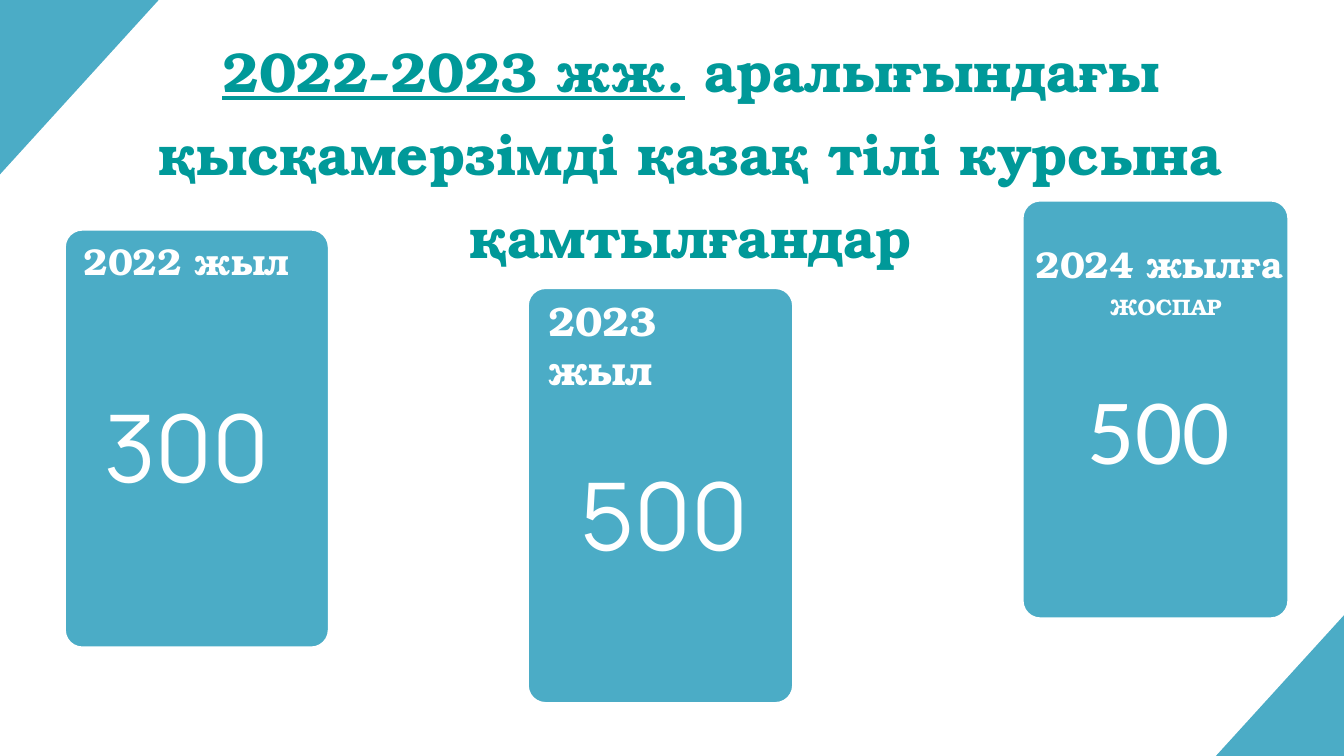
from pptx import Presentation
from pptx.dml.color import RGBColor
from pptx.enum.shapes import MSO_SHAPE as Shape
from pptx.enum.text import MSO_ANCHOR as Anchor, MSO_AUTO_SIZE as AutoSize, PP_ALIGN as Align
from pptx.util import Cm, Pt

BLUE = RGBColor(0x4B, 0xAC, 0xC6)
TEAL = RGBColor(0x00, 0x99, 0x99)
WHITE = RGBColor(0xFF, 0xFF, 0xFF)
SERIF = "TeX Gyre Bonum"
SANS = "Manrope"


def add_band(page, left, top):
    """Add a slanted corner band."""
    band = page.shapes.add_shape(Shape.RECTANGLE, Cm(left), Cm(top), Cm(5.44), Cm(14.61))
    band.rotation = 42.3
    band.shadow.inherit = False
    band.fill.solid()
    band.fill.fore_color.rgb = BLUE
    band.line.fill.background()


def add_card(page, left, top, width, height):
    """Add a rounded card with a white outline."""
    card = page.shapes.add_shape(Shape.ROUNDED_RECTANGLE, Cm(left), Cm(top), Cm(width), Cm(height))
    card.adjustments[0] = 0.07
    card.shadow.inherit = False
    card.fill.solid()
    card.fill.fore_color.rgb = BLUE
    card.line.color.rgb = WHITE
    card.line.width = Pt(4.5)


def set_frame(frame, inset=0, wrap=True):
    """Set the insets, wrapping and growth of a text frame."""
    frame.margin_left = frame.margin_right = Cm(2 * inset)
    frame.margin_top = frame.margin_bottom = Cm(inset)
    frame.word_wrap = wrap
    frame.auto_size = AutoSize.SHAPE_TO_FIT_TEXT
    frame.vertical_anchor = Anchor.TOP


def style_para(para, name, size, color=WHITE, bold=False, align=Align.CENTER, spacing=None):
    """Set the font, alignment and line spacing of a paragraph."""
    para.alignment = align
    if spacing:
        para.line_spacing = Pt(spacing)
    para.font.name = name
    para.font.size = Pt(size)
    para.font.bold = bold
    para.font.color.rgb = color


def add_text(page, left, top, width, height, text, inset=0, wrap=True, **style):
    """Add a one-paragraph text box and return its frame."""
    box = page.shapes.add_textbox(Cm(left), Cm(top), Cm(width), Cm(height))
    frame = box.text_frame
    set_frame(frame, inset, wrap)
    para = frame.paragraphs[0]
    para.text = text
    style_para(para, **style)
    return frame


def add_title(page):
    """Fill the title placeholder, underlining the period."""
    title = page.shapes.title
    title.left, title.top, title.width, title.height = Cm(4.17), Cm(0.79), Cm(43.87), Cm(9.5)
    set_frame(title.text_frame)
    para = title.text_frame.paragraphs[0]
    period = para.add_run()
    period.text = "2022-2023 жж."
    period.font.underline = True
    para.add_run().text = " аралығындағы қысқамерзімді қазақ тілі курсына қамтылғандар"
    style_para(para, SERIF, 60, TEAL, bold=True, spacing=88.8)


def add_labels(page):
    """Add the year headings of the cards."""
    heading = dict(name=SERIF, size=40, bold=True, spacing=36.3)
    add_text(page, 2.24, 9.42, 9.63, 1.27, "2022 жыл", **heading)
    add_text(page, 20.47, 11.05, 8.97, 2.13, "2023 жыл", inset=0.127,
             name=SERIF, size=44, bold=True, align=Align.LEFT)
    frame = add_text(page, 38.61, 9.53, 10.41, 2.57, "2024 жылға", **heading)
    plan = frame.add_paragraph()
    plan.text = "ЖОСПАР"
    plan._p.get_or_add_pPr().set("marL", str(Cm(0.5)))
    style_para(plan, SERIF, 24, bold=True, spacing=36.3)


def add_numbers(page):
    """Add the head counts of the cards."""
    count = dict(name=SANS, size=100, spacing=215.9)
    add_text(page, 3.05, 11.35, 8.03, 7.7, "300", **count)
    add_text(page, 20.45, 13.89, 9.32, 6.76, "500", **count)
    add_text(page, 40.87, 13.89, 5.92, 4.52, "500", inset=0.127, wrap=False,
             name="Calibri", size=100, align=Align.LEFT)


def main():
    """Build and save the deck."""
    deck = Presentation()
    deck.slide_width, deck.slide_height = Cm(50.8), Cm(28.58)
    page = deck.slides.add_slide(deck.slide_layouts[5])
    add_band(page, -1.75, -5.82)
    add_card(page, 2.41, 8.64, 10.06, 15.88)
    add_card(page, 19.91, 10.85, 10.11, 15.77)
    add_card(page, 38.61, 7.54, 10.13, 15.88)
    add_title(page)
    add_numbers(page)
    add_labels(page)
    add_band(page, 48.64, 19.38)
    deck.save("out.pptx")


if __name__ == "__main__":
    main()
